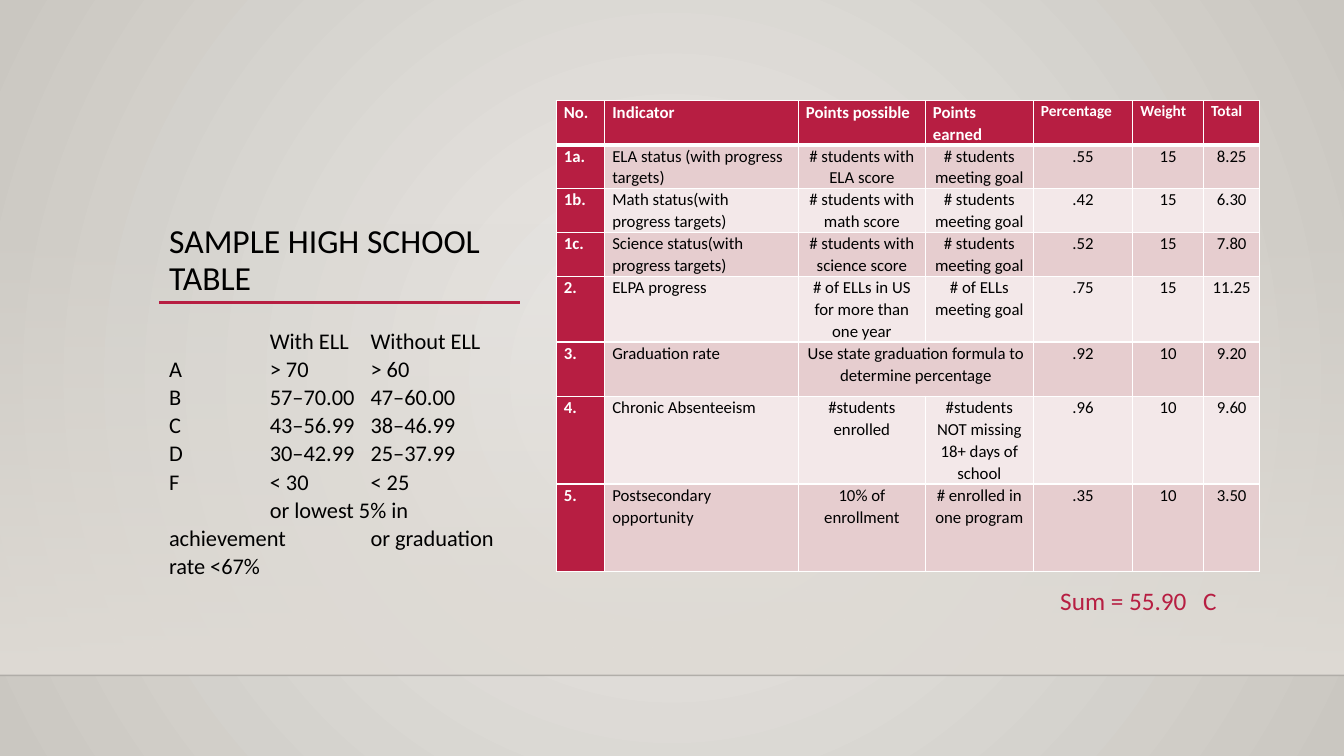
import pptx
import pptx.util
import pptx.dml.color
import pptx.enum.shapes
import pptx.enum.text
import pptx.oxml
import pptx.oxml.ns
from lxml import etree

Cm = pptx.util.Cm
Pt = pptx.util.Pt
RGBColor = pptx.dml.color.RGBColor
Align = pptx.enum.text.PP_ALIGN
qn = pptx.oxml.ns.qn

TITLE = "SAMPLE HIGH SCHOOL TABLE"
GRADES = [
    "\tWith ELL\tWithout ELL",
    "A\t> 70\t> 60",
    "B\t57–70.00\t47–60.00",
    "C\t43–56.99\t38–46.99",
    "D\t30–42.99\t25–37.99",
    "F\t< 30\t< 25",
    "\tor lowest 5% in achievement\tor graduation rate <67%",
]
SUM = "Sum = 55.90\tC"
INDICATORS = [
    ("No.", "Indicator", "Points possible", "Points earned", "Percentage", "Weight", "Total"),
    ("1a.", "ELA status (with progress targets)", "# students with ELA score",
     "# students meeting goal", ".55", "15", "8.25"),
    ("1b.", "Math status(with progress targets)", "# students with math score",
     "# students meeting goal", ".42", "15", "6.30"),
    ("1c.", "Science status(with progress targets)", "# students with science score",
     "# students meeting goal", ".52", "15", "7.80"),
    ("2.", "ELPA progress", "# of ELLs in US for more than one year",
     "# of ELLs meeting goal", ".75", "15", "11.25"),
    ("3.", "Graduation rate", "Use state graduation formula to determine percentage",
     None, ".92", "10", "9.20"),
    ("4.", "Chronic Absenteeism", "#students enrolled",
     "#students NOT missing 18+ days of school", ".96", "10", "9.60"),
    ("5.", "Postsecondary opportunity", "10% of enrollment",
     "# enrolled in one program", ".35", "10", "3.50"),
]
COLUMN_WIDTHS = [1.22, 4.88, 3.2, 2.72, 2.51, 1.78, 1.42]
ROW_HEIGHTS = [1.1, 1.1, 1.1, 1.1, 1.65, 1.37, 2.2, 2.2]

FONT = "Calibri"
BLACK = RGBColor(0x00, 0x00, 0x00)
WHITE = RGBColor(0xFF, 0xFF, 0xFF)
CRIMSON = RGBColor(0xB7, 0x1E, 0x42)
ROW_FILLS = [RGBColor(0xF3, 0xE8, 0xE9), RGBColor(0xE6, 0xCD, 0xCF)]
CENTRE_GREY = RGBColor(0xEC, 0xEA, 0xE7)
EDGE_GREY = RGBColor(0xCA, 0xC7, 0xC1)
FLOOR_GREY = RGBColor(0xDF, 0xDB, 0xD5)

SLIDE_WIDTH, SLIDE_HEIGHT = 33.87, 19.05
LEFT, TEXT_WIDTH = 4.01, 9.09
FLOOR_TOP, FLOOR_BOTTOM = 5.61, 17.02


def set_font(para, size, colour, bold=False):
    """Format the font of a whole paragraph."""
    para.font.name = FONT
    para.font.size = Pt(size)
    para.font.color.rgb = colour
    para.font.bold = bold


def set_tabs(para, stops):
    """Add left tab stops, given in centimetres."""
    tabs = etree.SubElement(para._p.get_or_add_pPr(), qn("a:tabLst"))
    for stop in stops:
        etree.SubElement(tabs, qn("a:tab"), pos=str(Cm(stop)), algn="l")


def set_alpha(colour_element, percent):
    """Set the opacity of a colour element."""
    etree.SubElement(colour_element, qn("a:alpha"), val=str(percent * 1000))


def add_rule(page, left, right, y, colour, weight):
    """Draw a horizontal line without a shadow."""
    rule = page.shapes.add_connector(
        pptx.enum.shapes.MSO_CONNECTOR.STRAIGHT, Cm(left), Cm(y), Cm(right), Cm(y))
    rule.line.color.rgb = colour
    rule.line.width = Pt(weight)
    etree.SubElement(rule.element.spPr, qn("a:effectLst"))
    return rule


def add_backdrop(page):
    """Paint the radial background, the floor and its edge."""
    fill = page.background.fill
    fill.gradient()
    for stop, colour in zip(fill.gradient_stops, (CENTRE_GREY, EDGE_GREY)):
        stop.color.rgb = colour
    linear = page.element.find(".//" + qn("a:lin"))
    circle = etree.Element(qn("a:path"), path="circle")
    etree.SubElement(circle, qn("a:fillToRect"), l="50000", t="50000", r="50000", b="50000")
    linear.getparent().replace(linear, circle)

    floor = page.shapes.add_shape(
        pptx.enum.shapes.MSO_SHAPE.RECTANGLE,
        0, Cm(FLOOR_TOP), Cm(SLIDE_WIDTH), Cm(FLOOR_BOTTOM - FLOOR_TOP))
    floor.shadow.inherit = False
    floor.line.fill.background()
    floor.fill.gradient()
    floor.fill.gradient_angle = 270
    for stop in floor.fill.gradient_stops:
        stop.color.rgb = FLOOR_GREY
    set_alpha(floor.element.spPr.find(".//" + qn("a:srgbClr")), 0)

    edge = add_rule(page, 0, SLIDE_WIDTH, FLOOR_BOTTOM, BLACK, 1)
    set_alpha(edge.element.spPr.find(".//" + qn("a:srgbClr")), 20)


def add_title(page):
    """Place the title above its crimson rule."""
    add_rule(page, LEFT, LEFT + TEXT_WIDTH, 7.62, CRIMSON, 2.5)
    title = page.shapes.title
    title.element.getparent().append(title.element)
    title.left, title.top = Cm(LEFT), Cm(2.21)
    title.width, title.height = Cm(TEXT_WIDTH), Cm(5.41)
    title.text_frame.text = TITLE
    title.text_frame.word_wrap = True
    title.text_frame.auto_size = pptx.enum.text.MSO_AUTO_SIZE.NONE
    title.text_frame.vertical_anchor = pptx.enum.text.MSO_ANCHOR.BOTTOM
    para = title.text_frame.paragraphs[0]
    para.alignment = Align.LEFT
    para.line_spacing = 0.9
    set_font(para, 24, BLACK)


def add_text(page, area, lines, stops, size, colour, spacing):
    """Add a text box with tabbed lines."""
    box = page.shapes.add_textbox(*map(Cm, area))
    box.text_frame.word_wrap = True
    box.text_frame.text = "\n".join(lines)
    for para in box.text_frame.paragraphs:
        set_tabs(para, stops)
        para.line_spacing = spacing
        set_font(para, size, colour)


def set_borders(cell, bottom):
    """Draw white cell borders with the given bottom width."""
    properties = cell._tc.get_or_add_tcPr()
    for position, (side, width) in enumerate(
            [("lnL", 1), ("lnR", 1), ("lnT", 1), ("lnB", bottom)]):
        line = etree.Element(qn("a:" + side), w=str(Pt(width)))
        solid = etree.SubElement(line, qn("a:solidFill"))
        etree.SubElement(solid, qn("a:srgbClr"), val=str(WHITE))
        properties.insert(position, line)


def add_indicator_table(page):
    """Add the table of indicators, points and weights."""
    table = page.shapes.add_table(
        len(ROW_HEIGHTS), len(COLUMN_WIDTHS), Cm(14.02), Cm(2.54),
        Cm(sum(COLUMN_WIDTHS)), Cm(sum(ROW_HEIGHTS))).table
    table.first_col = True
    for column, width in zip(table.columns, COLUMN_WIDTHS):
        column.width = Cm(width)
    for r, (values, height) in enumerate(zip(INDICATORS, ROW_HEIGHTS)):
        table.rows[r].height = Cm(height)
        for c, value in enumerate(values):
            cell = table.cell(r, c)
            heading = r == 0 or c == 0
            cell.margin_left = cell.margin_right = Cm(0.19)
            cell.margin_top = cell.margin_bottom = 0
            cell.fill.solid()
            cell.fill.fore_color.rgb = CRIMSON if heading else ROW_FILLS[r % 2]
            set_borders(cell, 3 if r == 0 else 1)
            if value is None:
                table.cell(r, c - 1).merge(cell)
                continue
            cell.text = value
            para = cell.text_frame.paragraphs[0]
            para.line_spacing = 1.07
            para.alignment = Align.CENTER if r > 0 and c > 1 else Align.LEFT
            set_font(para, 11 if r == 0 and c > 3 else 12,
                     WHITE if heading else BLACK, heading)


def main():
    """Build the slide and save it."""
    deck = pptx.Presentation()
    deck.slide_width, deck.slide_height = Cm(SLIDE_WIDTH), Cm(SLIDE_HEIGHT)
    page = deck.slides.add_slide(deck.slide_layouts.get_by_name("Title Only"))
    add_backdrop(page)
    add_title(page)
    add_indicator_table(page)
    add_text(page, (LEFT, 8.08, TEXT_WIDTH, 7.09), GRADES, (2.54, 5.08), 16, BLACK, 1.05)
    add_text(page, (26.47, 14.63, 4.78, 1.02), [SUM], (3.6,), 18, CRIMSON, 1.0)
    deck.save("out.pptx")


if __name__ == "__main__":
    main()
